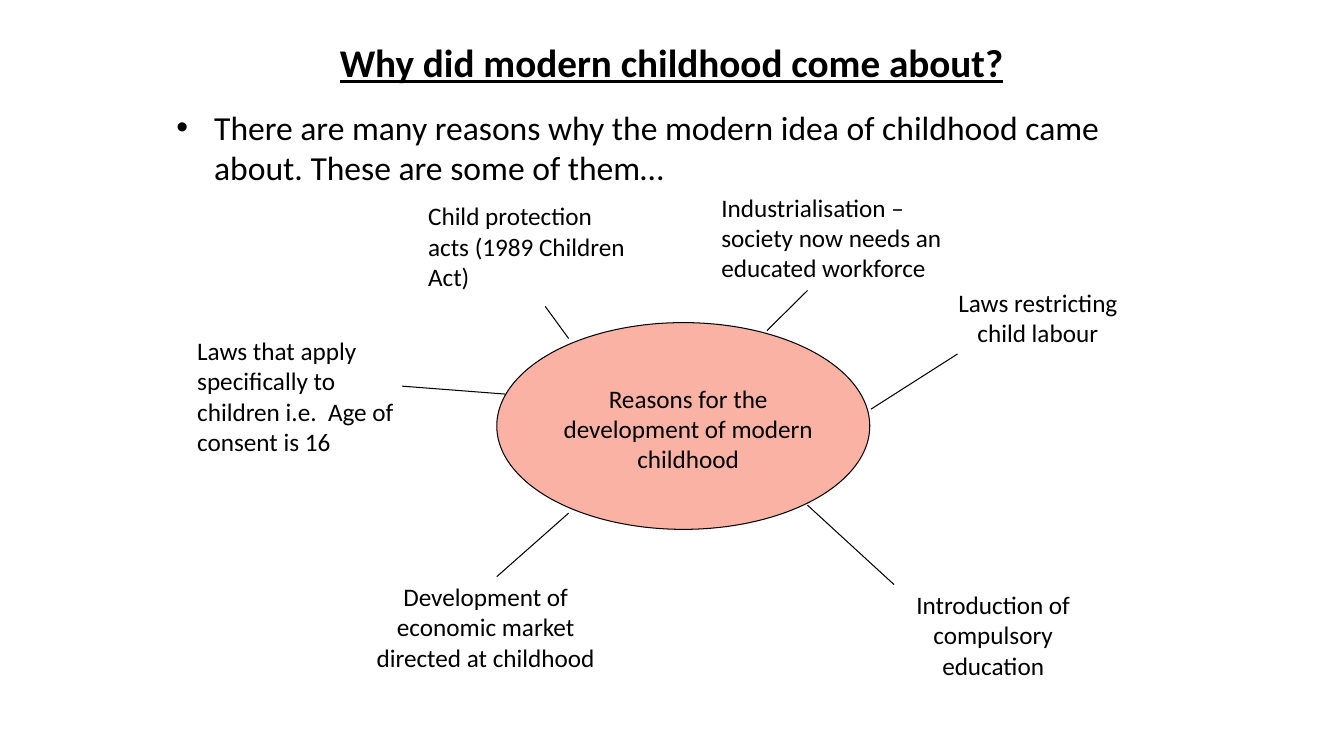
import pptx
import pptx.util
import pptx.dml.color
import pptx.enum.shapes
import pptx.enum.text
import pptx.oxml.ns
import lxml.etree
from dataclasses import dataclass

Cm, Pt = pptx.util.Cm, pptx.util.Pt
RGB = pptx.dml.color.RGBColor.from_string
LEFT, CENTER = pptx.enum.text.PP_ALIGN.LEFT, pptx.enum.text.PP_ALIGN.CENTER


@dataclass
class Theme:
    font: str = "Calibri"
    ink: str = "000000"
    oval: str = "FAB2A4"
    title: int = 28
    body: int = 24
    label: int = 18
    line: float = 0.75


theme = Theme()


def place(sp, box):
    sp.left, sp.top, sp.width, sp.height = [Cm(v) for v in box]


def write(sp, text, size, align, bold=None, underline=None):
    tf = sp.text_frame
    tf.text = text
    tf.word_wrap = True
    tf.auto_size = pptx.enum.text.MSO_AUTO_SIZE.NONE
    p = tf.paragraphs[0]
    p.alignment = align
    f = p.runs[0].font
    f.name, f.size, f.bold, f.underline = theme.font, Pt(size), bold, underline
    f.color.rgb = RGB(theme.ink)


prs = pptx.Presentation()
prs.slide_width, prs.slide_height = Cm(33.87), Cm(19.05)
s = prs.slides.add_slide(prs.slide_layouts[1])

# Title and introduction
title, body = s.placeholders
place(title, (5.49, 0.58, 22.86, 1.96))
write(title, "Why did modern childhood come about?", theme.title, CENTER, True, True)
place(body, (4.19, 2.57, 25.4, 14.81))
write(body, "There are many reasons why the modern idea of childhood came about. "
      "These are some of them…", theme.body, LEFT)

# Central oval
oval = s.shapes.add_shape(pptx.enum.shapes.MSO_SHAPE.OVAL,
                          Cm(12.52), Cm(8.13), Cm(9.4), Cm(5.21))
oval.shadow.inherit = False
oval.fill.solid()
oval.fill.fore_color.rgb = RGB(theme.oval)
oval.line.color.rgb = RGB(theme.ink)
oval.line.width = Pt(theme.line)

# Spokes from the oval to the reasons: x1, y1, x2, y2
spokes = [
    (21.95, 10.31, 24.13, 8.92),
    (20.35, 12.73, 22.53, 14.73),
    (14.33, 8.53, 13.74, 7.72),
    (12.73, 9.93, 10.13, 9.73),
    (14.33, 12.93, 12.52, 14.53),
    (19.33, 8.33, 20.35, 7.32),
]
for ends in spokes:
    cx = s.shapes.add_connector(pptx.enum.shapes.MSO_CONNECTOR.STRAIGHT,
                                *[Cm(v) for v in ends])
    cx.line.color.rgb = RGB(theme.ink)
    cx.line.width = Pt(theme.line)
    lxml.etree.SubElement(cx._element.spPr, pptx.oxml.ns.qn("a:effectLst"))

# Oval caption and reasons: text, box, alignment
labels = [
    ("Reasons for the development of modern childhood",
     (13.74, 9.53, 7.21, 2.54), CENTER),
    ("Laws restricting child labour", (23.55, 7.11, 5.21, 1.78), CENTER),
    ("Introduction of compulsory education", (22.73, 14.73, 4.6, 2.54), CENTER),
    ("Development of economic market directed at childhood",
     (8.94, 14.53, 6.6, 2.54), CENTER),
    ("Laws that apply specifically to children i.e.  Age of consent is 16",
     (4.72, 8.33, 5.79, 3.3), LEFT),
    ("Child protection acts (1989 Children Act)", (10.54, 4.93, 5.59, 2.54), LEFT),
    ("Industrialisation – society now needs an educated workforce",
     (17.93, 4.72, 7.01, 2.54), LEFT),
]
for text, box, align in labels:
    sp = s.shapes.add_textbox(*[Cm(v) for v in box])
    write(sp, text, theme.label, align)

prs.save("out.pptx")
